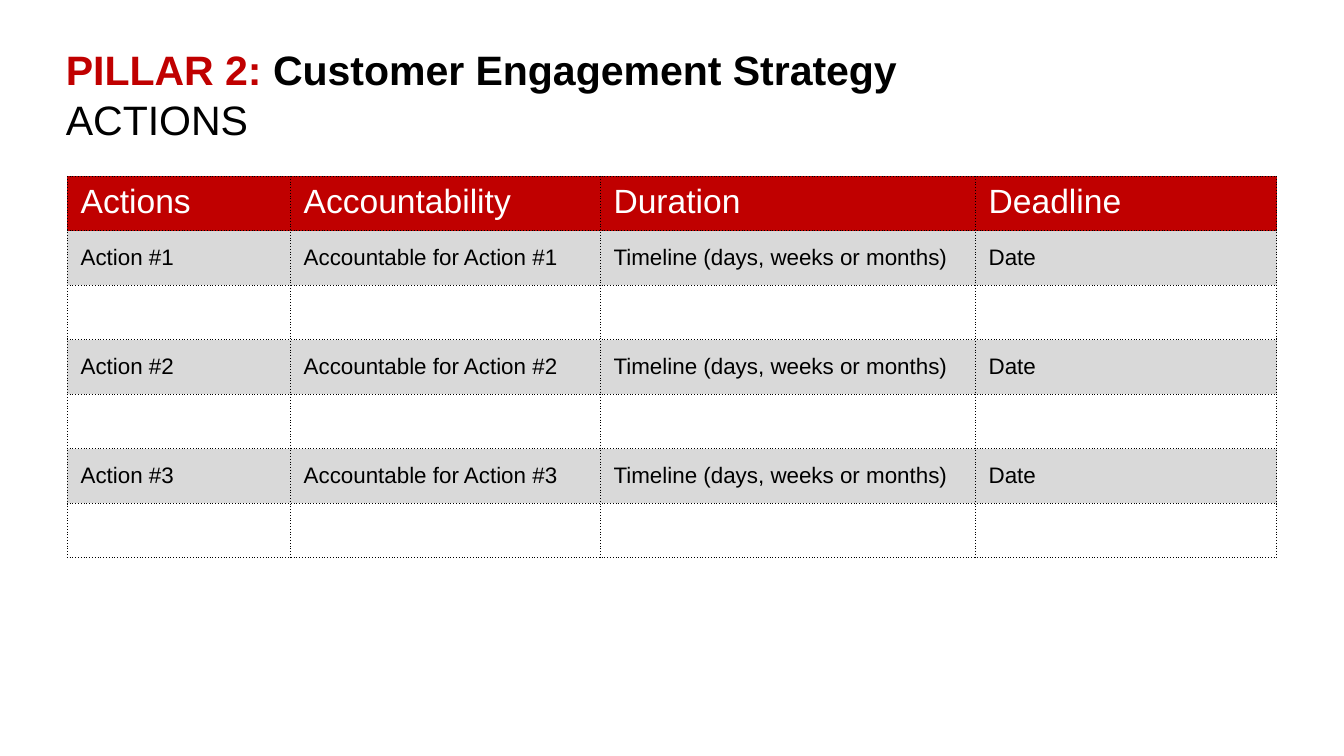
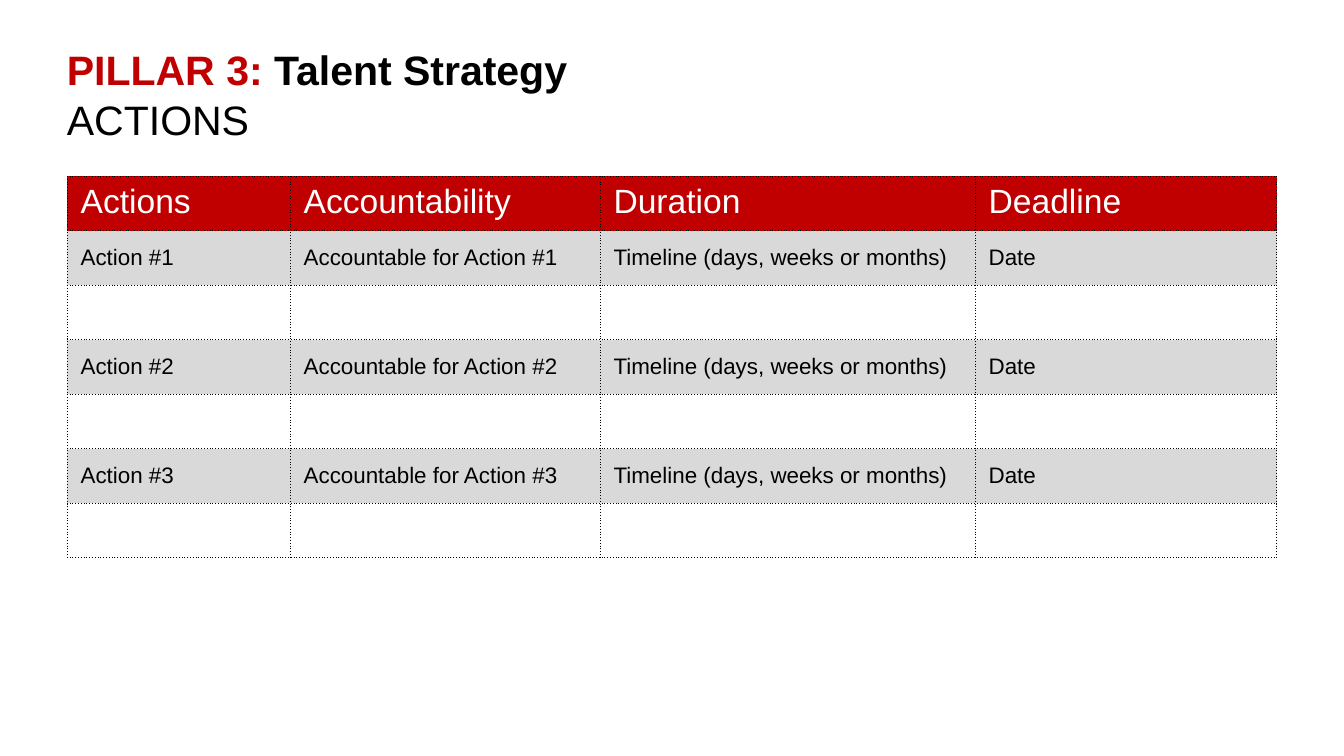
from lxml import etree
from pptx import Presentation
from pptx.dml.color import RGBColor
from pptx.enum.text import MSO_ANCHOR
from pptx.oxml.ns import qn
from pptx.util import Pt

RED = RGBColor(0xC0, 0x00, 0x00)
GRAY = RGBColor(0xD9, 0xD9, 0xD9)
BLACK = RGBColor(0x00, 0x00, 0x00)
WHITE = RGBColor(0xFF, 0xFF, 0xFF)
FONT = "Arial"

COL_WIDTHS = [119.5, 166, 201, 161.5]
ROW_HEIGHT = 29.2
HEADERS = ["Actions", "Accountability", "Duration", "Deadline"]
PILLARS = [
    ("PILLAR 2: ", "Customer Engagement Strategy", 28.2),
    ("PILLAR 3: ", "Talent Strategy", 28.8),
]

rows = [HEADERS]
for n in range(1, 4):
    rows.append([f"Action #{n}", f"Accountable for Action #{n}",
                 "Timeline (days, weeks or months)", "Date"])
    rows.append([""] * len(HEADERS))


def add_run(p, text, size, color, bold=False):
    r = p.add_run()
    r.text = text
    r.font.name = FONT
    r.font.size = Pt(size)
    r.font.bold = bold
    r.font.color.rgb = color


def add_borders(cell):
    tcPr = cell._tc.get_or_add_tcPr()
    for side in ("a:lnL", "a:lnR", "a:lnT", "a:lnB"):
        ln = etree.SubElement(tcPr, qn(side), w=str(Pt(0.5)))
        fill = etree.SubElement(ln, qn("a:solidFill"))
        etree.SubElement(fill, qn("a:srgbClr"), val=str(BLACK))
        etree.SubElement(ln, qn("a:prstDash"), val="sysDot")


prs = Presentation()
prs.slide_width = Pt(720)
prs.slide_height = Pt(405)

for pillar, strategy, title_left in PILLARS:
    s = prs.slides.add_slide(prs.slide_layouts[6])

    table = s.shapes.add_table(len(rows), len(HEADERS), Pt(36), Pt(94.5),
                               Pt(sum(COL_WIDTHS)), Pt(ROW_HEIGHT * len(rows))).table
    table.horz_banding = False
    table.first_row = False
    for column, width in zip(table.columns, COL_WIDTHS):
        column.width = Pt(width)
    for i, texts in enumerate(rows):
        table.rows[i].height = Pt(ROW_HEIGHT)
        for j, text in enumerate(texts):
            cell = table.cell(i, j)
            add_borders(cell)
            if not text:
                cell.fill.background()
                continue
            cell.fill.solid()
            cell.fill.fore_color.rgb = GRAY if i else RED
            p = cell.text_frame.paragraphs[0]
            if i:
                cell.vertical_anchor = MSO_ANCHOR.MIDDLE
                add_run(p, text, 12, BLACK)
            else:
                add_run(p, text, 18, WHITE)

    title = s.shapes.add_textbox(Pt(title_left), Pt(16.6), Pt(648), Pt(67.7))
    tf = title.text_frame
    tf.word_wrap = True
    tf.vertical_anchor = MSO_ANCHOR.MIDDLE
    p = tf.paragraphs[0]
    add_run(p, pillar, 22, RED, True)
    add_run(p, strategy, 22, BLACK, True)
    p.add_line_break()
    add_run(p, "ACTIONS", 22, BLACK)

prs.save("out.pptx")
